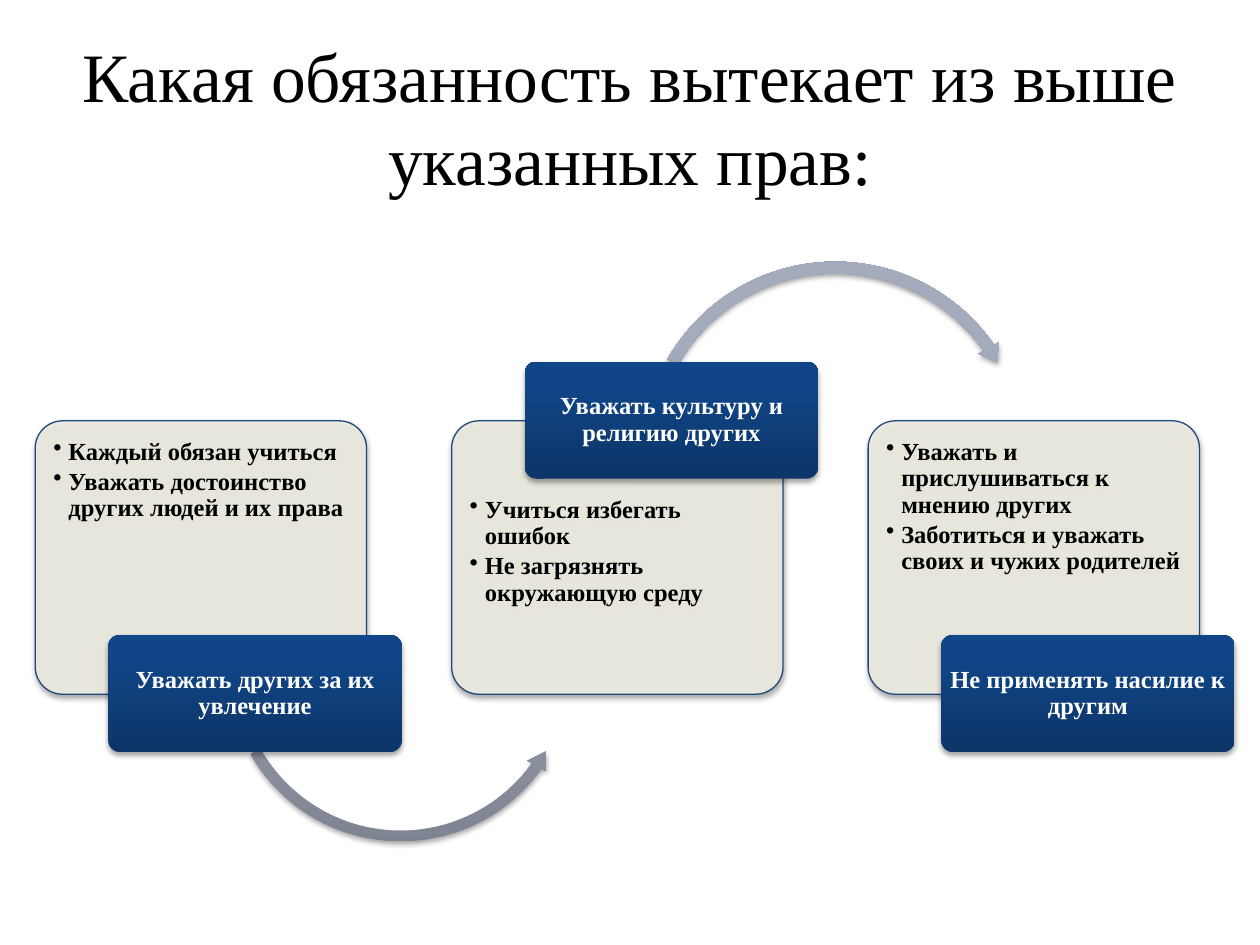
import copy
from dataclasses import dataclass

import lxml.etree as etree
import pptx
import pptx.dml.color
import pptx.enum.shapes
import pptx.enum.text
import pptx.oxml.ns
import pptx.util

Inches = pptx.util.Inches
Pt = pptx.util.Pt
qn = pptx.oxml.ns.qn
SHAPE = pptx.enum.shapes.MSO_SHAPE
ALIGN = pptx.enum.text.PP_ALIGN
ANCHOR = pptx.enum.text.MSO_ANCHOR


@dataclass(frozen=True)
class Theme:
    font: str = "Times New Roman"
    title_size: float = 39.6
    body_size: float = 14
    dark: str = "000000"
    light: str = "FFFFFF"
    card: str = "EEECE1"
    card_opacity: int = 90
    outline: str = "1F497D"
    label: tuple = ((0, "0D3568"), (0.8, "104587"), (1, "0E458A"))
    arrow: tuple = ((0, "7E8391"), (0.8, "A4ABBC"), (1, "A4ABBE"))


def set_all(target, values):
    for name, value in values.items():
        setattr(target, name, value)


def rgb(color):
    return pptx.dml.color.RGBColor.from_string(color)


def add_xml(parent, tag, **attributes):
    return etree.SubElement(parent, qn(tag), {k: str(v) for k, v in attributes.items()})


class Deck:
    """Holds the theme and the current slide."""

    def __init__(self, slide, theme):
        self.slide, self.theme = slide, theme

    def add_text(self, s, paragraphs, size, color, frame, para, bold=True):
        tf = s.text_frame
        set_all(tf, {"word_wrap": True, **frame})
        for i, text in enumerate(paragraphs):
            p = tf.add_paragraph() if i else tf.paragraphs[0]
            set_all(p, para)
            r = p.add_run()
            r.text = text
            set_all(r.font, {"name": self.theme.font, "size": Pt(size), "bold": bold})
            r.font.color.rgb = rgb(color)

    def shape(self, kind, box, adjustments):
        """Add a preset shape with a soft shadow below it."""
        s = self.slide.shapes.add_shape(kind, *map(Inches, box))
        for i, value in enumerate(adjustments):
            s.adjustments[i] = value
        s.line.fill.background()
        s.shadow.inherit = False
        effects = s._element.spPr.find(qn("a:effectLst"))
        shadow = add_xml(effects, "a:outerShdw", blurRad=Pt(3.1), dist=Pt(1.8),
                         dir=5400000, rotWithShape=0)
        add_xml(add_xml(shadow, "a:srgbClr", val="000000"), "a:alpha", val=35000)
        return s

    def gradient(self, s, stops):
        """Fill from bottom to top with three stops."""
        s.fill.gradient()
        s.fill.gradient_angle = 90
        stop_list = s._element.spPr.find(".//" + qn("a:gsLst"))
        stop_list.append(copy.deepcopy(stop_list[0]))
        for stop, (position, color) in zip(s.fill.gradient_stops, stops):
            stop.position = position
            stop.color.rgb = rgb(color)

    def title(self, text, box):
        s = self.slide.shapes.add_textbox(*map(Inches, box))
        self.add_text(s, [text], self.theme.title_size, self.theme.dark,
                      {"vertical_anchor": ANCHOR.MIDDLE}, {"alignment": ALIGN.CENTER}, bold=False)

    def card(self, duties, box, top_inset):
        s = self.shape(SHAPE.ROUNDED_RECTANGLE, box, [0.1])
        s.fill.solid()
        s.fill.fore_color.rgb = rgb(self.theme.card)
        color = s._element.spPr.find(qn("a:solidFill"))[0]
        add_xml(color, "a:alpha", val=self.theme.card_opacity * 1000)
        s.line.color.rgb = rgb(self.theme.outline)
        s.line.width = Pt(0.75)
        frame = {"vertical_anchor": ANCHOR.TOP, "margin_top": Inches(top_inset),
                 "margin_left": Inches(0.08), "margin_right": Inches(0.08)}
        para = {"alignment": ALIGN.LEFT, "line_spacing": 0.9, "space_after": Pt(2.1)}
        self.add_text(s, duties, self.theme.body_size, self.theme.dark, frame, para)
        for p in s.text_frame.paragraphs:
            pPr = p._p.get_or_add_pPr()
            pPr.set("marL", str(Inches(0.12)))
            pPr.set("indent", str(-Inches(0.12)))
            add_xml(pPr, "a:buChar", char="•")

    def label(self, text, box):
        s = self.shape(SHAPE.ROUNDED_RECTANGLE, box, [0.1])
        self.gradient(s, self.theme.label)
        sides = ("left", "top", "right", "bottom")
        frame = {"vertical_anchor": ANCHOR.MIDDLE, **{f"margin_{side}": 0 for side in sides}}
        self.add_text(s, [text], self.theme.body_size, self.theme.light, frame,
                      {"alignment": ALIGN.CENTER, "line_spacing": 0.9})

    def arrow(self, kind, box, adjustments):
        self.gradient(self.shape(kind, box, adjustments), self.theme.arrow)


CARD_LEFT, CARD_TOP, CARD_STEP = 0.28, 3.34, 3.305
CARD_SIZE = (2.63, 2.17)
LABEL_SHIFT, LABEL_SIZE = 0.58, (2.33, 0.93)
LABEL_ABOVE, LABEL_BELOW = 2.87, 5.04

# duties, label, label top, text inset, arrow to the next card
STEPS = [
    (["Каждый обязан учиться", "Уважать достоинство других людей и их права"],
     "Уважать других за их увлечение", LABEL_BELOW, 0.08,
     (SHAPE.LEFT_CIRCULAR_ARROW, (1.77, 3.9, 2.82, 2.82), (0.03, 3.53, 21.29, 90.25, 0.03))),
    (["Учиться избегать ошибок", "Не загрязнять окружающую среду"],
     "Уважать культуру и религию других", LABEL_ABOVE, 0.54,
     (SHAPE.CIRCULAR_ARROW, (5.05, 2.03, 3.16, 3.16), (0.03, 3.13, 195.11, 125.76, 0.03))),
    (["Уважать и прислушиваться к мнению других",
      "Заботиться и уважать своих и чужих родителей"],
     "Не применять насилие к другим", LABEL_BELOW, 0.08, None),
]


def main():
    prs = pptx.Presentation()
    prs.slide_width, prs.slide_height = Inches(10), Inches(7.5)
    deck = Deck(prs.slides.add_slide(prs.slide_layouts[6]), Theme())
    deck.title("Какая обязанность вытекает из выше указанных прав:", (0.5, 0.3, 9, 1.25))
    for i, (duties, label, label_top, inset, arrow) in enumerate(STEPS):
        left = CARD_LEFT + i * CARD_STEP
        deck.card(duties, (left, CARD_TOP, *CARD_SIZE), inset)
        if arrow:
            deck.arrow(*arrow)
        deck.label(label, (left + LABEL_SHIFT, label_top, *LABEL_SIZE))
    prs.save("out.pptx")


if __name__ == "__main__":
    main()
